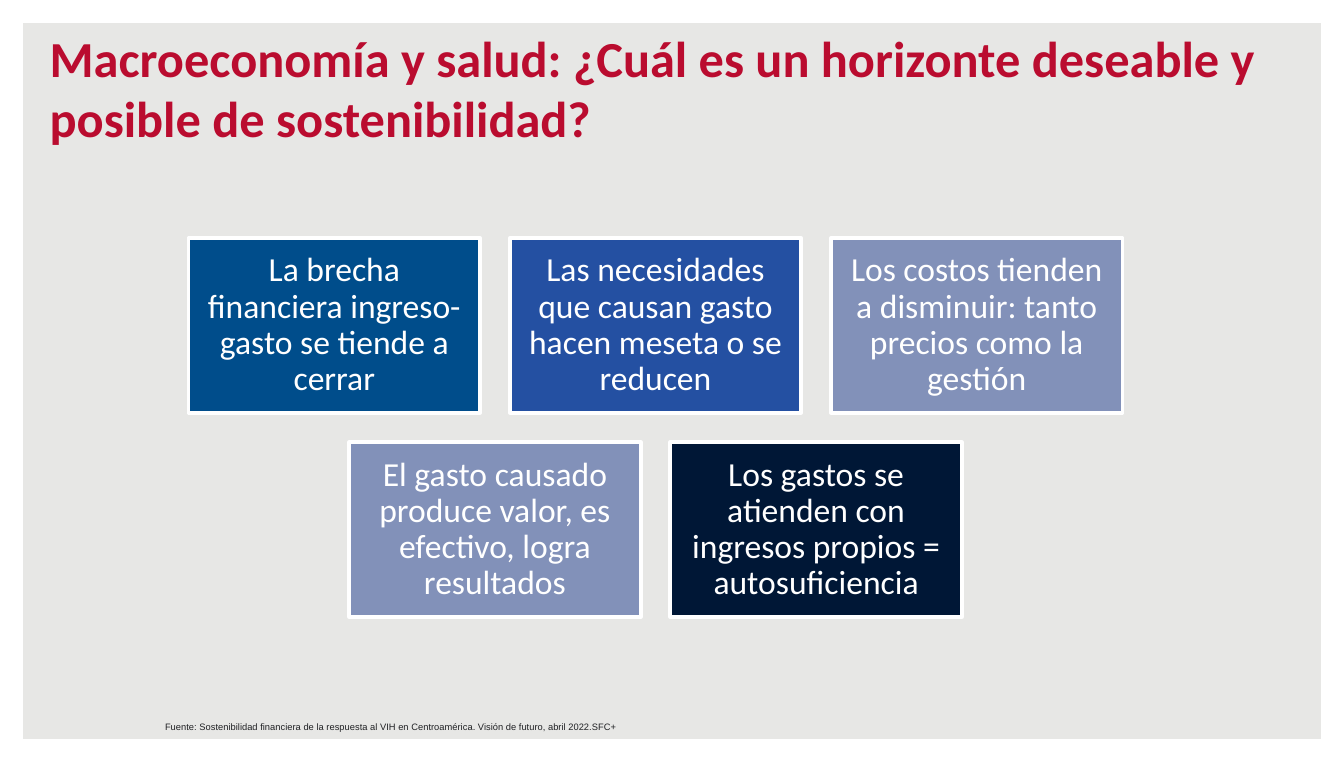
from pptx import Presentation
from pptx.dml.color import RGBColor
from pptx.enum.shapes import MSO_SHAPE
from pptx.enum.text import MSO_ANCHOR, PP_ALIGN
from pptx.util import Cm, Pt

FRAME, RECTANGLE = MSO_SHAPE.FRAME, MSO_SHAPE.RECTANGLE
TOP, MIDDLE, BOTTOM = MSO_ANCHOR.TOP, MSO_ANCHOR.MIDDLE, MSO_ANCHOR.BOTTOM
CENTER = PP_ALIGN.CENTER

COLORS = {
    "background": "E7E7E5",
    "white": "FFFFFF",
    "title": "BA0C2F",
    "source": "202124",
    "blue": "004D8B",
    "royal": "2450A2",
    "lavender": "8291B9",
    "navy": "001736",
}

SLIDE_WIDTH, SLIDE_HEIGHT = 25.4, 14.4
CARD_WIDTH, CARD_HEIGHT, CARD_GAP = 5.51, 3.3, 0.56
CARDS_CENTER, CARDS_TOP = 12.39, 4.5

CARD_ROWS = [
    [
        ("La brecha financiera ingreso-gasto se tiende a cerrar", "blue"),
        ("Las necesidades que causan gasto hacen meseta o se reducen", "royal"),
        ("Los costos tienden a disminuir: tanto precios como la gestión", "lavender"),
    ],
    [
        ("El gasto causado produce valor, es efectivo, logra resultados", "lavender"),
        ("Los gastos se atienden con ingresos propios = autosuficiencia", "navy"),
    ],
]


class SlideBuilder:
    """Holds the style and the current slide."""

    def __init__(self, slide, font="Calibri"):
        self.slide = slide
        self.font = font

    def color(self, name):
        return RGBColor.from_string(COLORS[name])

    def background(self, color):
        fill = self.slide.background.fill
        fill.solid()
        fill.fore_color.rgb = self.color(color)

    def shape(self, kind, left, top, width, height, fill):
        shape = self.slide.shapes.add_shape(
            kind, Cm(left), Cm(top), Cm(width), Cm(height))
        shape.shadow.inherit = False
        shape.fill.solid()
        shape.fill.fore_color.rgb = self.color(fill)
        shape.line.fill.background()
        return shape

    def set_text(self, shape, text, size, color, font=None, bold=False, anchor=TOP):
        text_frame = shape.text_frame
        text_frame.word_wrap = True
        text_frame.vertical_anchor = anchor
        text_frame.text = text
        paragraph = text_frame.paragraphs[0]
        style = paragraph.runs[0].font
        style.name = font or self.font
        style.size = Pt(size)
        style.bold = bold
        style.color.rgb = self.color(color)
        return paragraph

    def text(self, left, top, width, height, text, size, color, **options):
        box = self.slide.shapes.add_textbox(
            Cm(left), Cm(top), Cm(width), Cm(height))
        self.set_text(box, text, size, color, **options)

    def frame(self, thickness):
        frame = self.shape(FRAME, 0, 0, SLIDE_WIDTH, SLIDE_HEIGHT, "white")
        frame.adjustments[0] = thickness

    def card(self, left, top, text, fill):
        card = self.shape(RECTANGLE, left, top, CARD_WIDTH, CARD_HEIGHT, fill)
        card.line.color.rgb = self.color("white")
        card.line.width = Pt(2)
        paragraph = self.set_text(card, text, 18, "white", anchor=MIDDLE)
        paragraph.alignment = CENTER
        paragraph.line_spacing = 0.9
        text_frame = card.text_frame
        text_frame.margin_left = text_frame.margin_right = Cm(0.18)
        text_frame.margin_top = text_frame.margin_bottom = Cm(0.18)

    def card_row(self, top, cards):
        step = CARD_WIDTH + CARD_GAP
        left = CARDS_CENTER - (len(cards) * step - CARD_GAP) / 2
        for column, (text, fill) in enumerate(cards):
            self.card(left + column * step, top, text, fill)


def main():
    presentation = Presentation()
    presentation.slide_width = Cm(SLIDE_WIDTH)
    presentation.slide_height = Cm(SLIDE_HEIGHT)
    slide = presentation.slides.add_slide(presentation.slide_layouts[6])
    builder = SlideBuilder(slide)

    # Background and white border
    builder.background("background")
    builder.frame(0.03)

    # Title
    builder.text(0.69, 0.53, 24.23, 2.39,
                 "Macroeconomía y salud: ¿Cuál es un horizonte deseable y "
                 "posible de sostenibilidad?",
                 27, "title", bold=True, anchor=BOTTOM)

    # Source note
    builder.text(2.87, 13.51, 21.69, 0.48,
                 "Fuente: Sostenibilidad financiera de la respuesta al VIH en "
                 "Centroamérica. Visión de futuro, abril 2022.SFC+",
                 5, "source", font="Arial")

    # Centred rows of cards
    for row, cards in enumerate(CARD_ROWS):
        builder.card_row(CARDS_TOP + row * (CARD_HEIGHT + CARD_GAP), cards)

    presentation.save("out.pptx")


if __name__ == "__main__":
    main()
